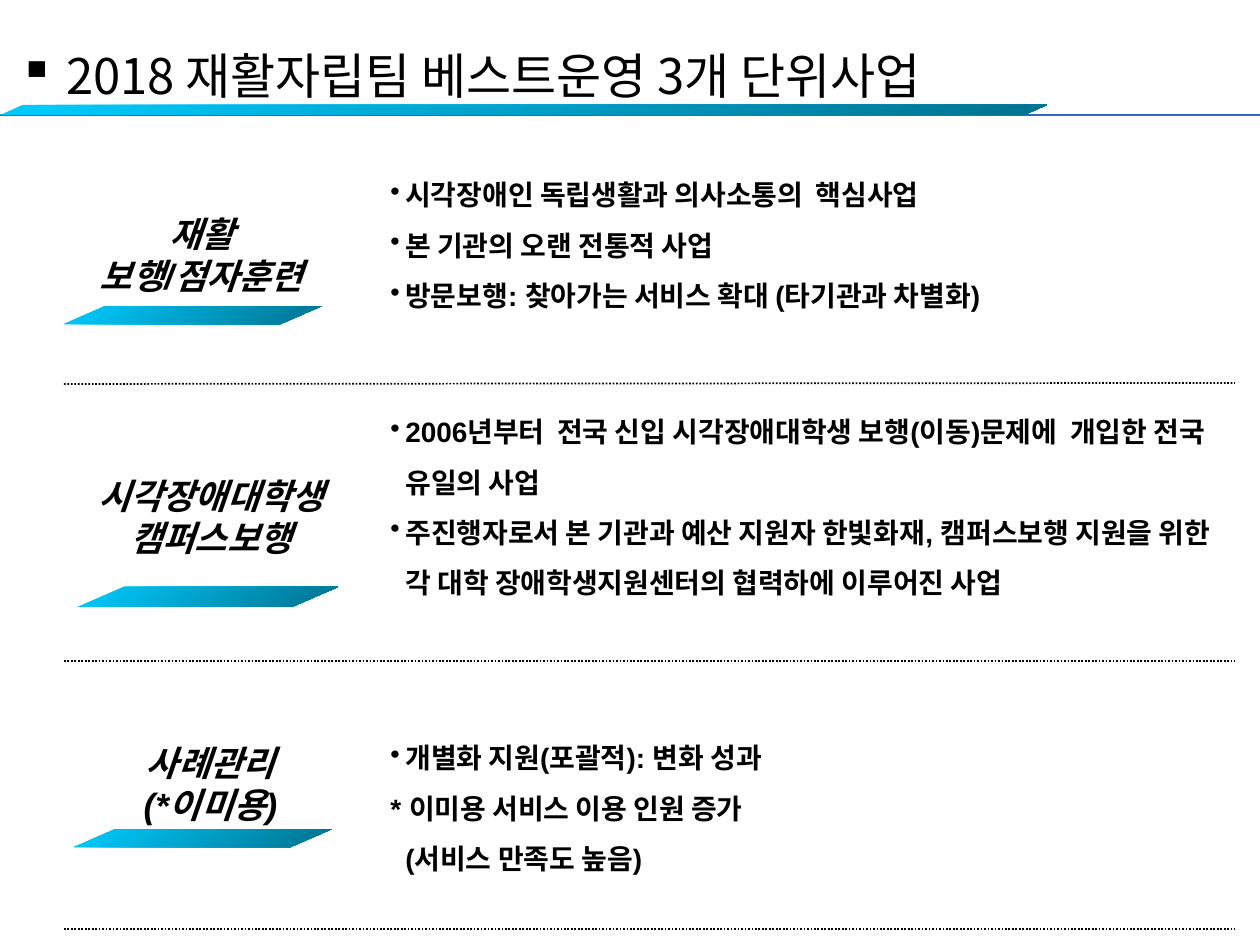
from lxml.etree import SubElement
from pptx import Presentation
from pptx.dml.color import RGBColor
from pptx.enum.dml import MSO_LINE_DASH_STYLE as Dash
from pptx.enum.shapes import MSO_CONNECTOR, MSO_SHAPE
from pptx.enum.text import MSO_ANCHOR, MSO_AUTO_SIZE, PP_ALIGN
from pptx.oxml.ns import qn
from pptx.util import Pt

PX = 914400 / 126
KOREAN = "Noto Sans CJK KR"
BLACK, CYAN, TEAL, BLUE = "000000", "00CCFF", "00728F", "3366CC"
HANG = 15

TITLE = " 2018 재활자립팀 베스트운영 3개 단위사업"
PROGRAMS = [
    {
        "label": ["재활", "보행/점자훈련"],
        "label_box": (35, 185, 333, 140),
        "bar_box": (64, 306, 258, 18),
        "points": [
            ("•", "시각장애인 독립생활과 의사소통의  핵심사업"),
            ("•", "본 기관의 오랜 전통적 사업"),
            ("•", "방문보행: 찾아가는 서비스 확대 (타기관과 차별화)"),
        ],
        "points_box": (378, 155, 708, 165),
        "divider": (384, 383),
    },
    {
        "label": ["시각장애대학생", "캠퍼스보행"],
        "label_box": (82, 447, 258, 140),
        "bar_box": (78, 587, 260, 20),
        "points": [
            ("•", "2006년부터  전국 신입 시각장애대학생 보행(이동)문제에  개입한 전국 유일의 사업"),
            ("•", "주진행자로서 본 기관과 예산 지원자 한빛화재, 캠퍼스보행 지원을 "
                  "위한 각 대학 장애학생지원센터의 협력하에 이루어진 사업"),
        ],
        "points_box": (378, 392, 852, 267),
        "divider": (661, 661),
    },
    {
        "label": ["사례관리", "(*이미용)"],
        "label_box": (44, 714, 333, 140),
        "bar_box": (74, 829, 258, 18),
        "points": [
            ("•", "개별화 지원(포괄적): 변화 성과"),
            ("*", "* 이미용 서비스 이용 인원 증가"),
            ("", "(서비스 만족도 높음)"),
        ],
        "points_box": (378, 718, 576, 165),
        "divider": (929, 929),
    },
]


def px(length):
    """Turn px into EMU."""
    return round(length * PX)


def rgb(code):
    """Turn a hex string into a colour."""
    return RGBColor.from_string(code)


def style(paragraph, size, latin="Arial", bold=False, italic=False):
    """Format every run of a paragraph."""
    for run in paragraph.runs:
        font = run.font
        font.size, font.name, font.bold, font.italic = Pt(size), latin, bold, italic
        font.color.rgb = rgb(BLACK)
        east_asian = SubElement(run._r.get_or_add_rPr(), qn("a:ea"))
        east_asian.set("typeface", KOREAN)


def add_bullet(paragraph, mark, margin=0, indent=0):
    """Set the indents and an optional bullet character."""
    properties = paragraph._p.get_or_add_pPr()
    properties.set("marL", str(px(margin)))
    properties.set("indent", str(px(indent)))
    if mark:
        SubElement(properties, qn("a:buChar")).set("char", mark)


def add_rule(slide, start, end, colour, width, dash=None):
    """Draw a straight rule."""
    rule = slide.shapes.add_connector(MSO_CONNECTOR.STRAIGHT, *map(px, start + end))
    rule.line.color.rgb = rgb(colour)
    rule.line.width = Pt(width)
    if dash:
        rule.line.dash_style = dash
    SubElement(rule._element.spPr, qn("a:effectLst"))


def add_bar(slide, box):
    """Draw a slanted gradient bar."""
    bar = slide.shapes.add_shape(MSO_SHAPE.PARALLELOGRAM, *map(px, box))
    bar.adjustments[0] = 2.3
    bar.shadow.inherit = False
    bar.line.fill.background()
    bar.fill.gradient()
    bar.fill.gradient_angle = 315
    for stop, colour in zip(bar.fill.gradient_stops, (CYAN, TEAL)):
        stop.color.rgb = rgb(colour)


def add_label(slide, lines, box):
    """Write a centred programme name."""
    frame = slide.shapes.add_textbox(*map(px, box)).text_frame
    frame.word_wrap = False
    frame.vertical_anchor = MSO_ANCHOR.MIDDLE
    frame.text = "\n".join(lines)
    for paragraph in frame.paragraphs:
        paragraph.alignment = PP_ALIGN.CENTER
        style(paragraph, 20, bold=True, italic=True)


def add_points(slide, points, box):
    """Write the points of a programme."""
    frame = slide.shapes.add_textbox(*map(px, box)).text_frame
    frame.word_wrap = True
    frame.auto_size = MSO_AUTO_SIZE.SHAPE_TO_FIT_TEXT
    frame.text = "\n".join(wording for _, wording in points)
    for paragraph, (mark, _) in zip(frame.paragraphs, points):
        paragraph.line_spacing = 1.5
        add_bullet(paragraph, "•" if mark == "•" else "", HANG, -HANG if mark else 0)
        style(paragraph, 16, bold=True)


def add_title(slide):
    """Place and format the title."""
    title = slide.shapes.title
    title.left, title.top, title.width, title.height = map(px, (6, 39, 1045, 72))
    frame = title.text_frame
    frame.text = TITLE
    frame.word_wrap = False
    frame.auto_size = MSO_AUTO_SIZE.SHAPE_TO_FIT_TEXT
    frame.vertical_anchor = MSO_ANCHOR.TOP
    heading = frame.paragraphs[0]
    heading.alignment = PP_ALIGN.LEFT
    add_bullet(heading, "▪")
    style(heading, 28, KOREAN)


def main():
    """Build the slide."""
    deck = Presentation()
    deck.slide_width, deck.slide_height = px(1260), px(945)
    slide = deck.slides.add_slide(deck.slide_layouts[5])
    add_title(slide)
    add_rule(slide, (0, 115), (1260, 115), BLUE, 0.75)
    add_bar(slide, (0, 105, 1047, 10))
    for program in PROGRAMS:
        left_y, right_y = program["divider"]
        add_bar(slide, program["bar_box"])
        add_label(slide, program["label"], program["label_box"])
        add_points(slide, program["points"], program["points_box"])
        add_rule(slide, (64, left_y), (1235, right_y), BLACK, 1, Dash.ROUND_DOT)
    deck.save("out.pptx")


if __name__ == "__main__":
    main()
